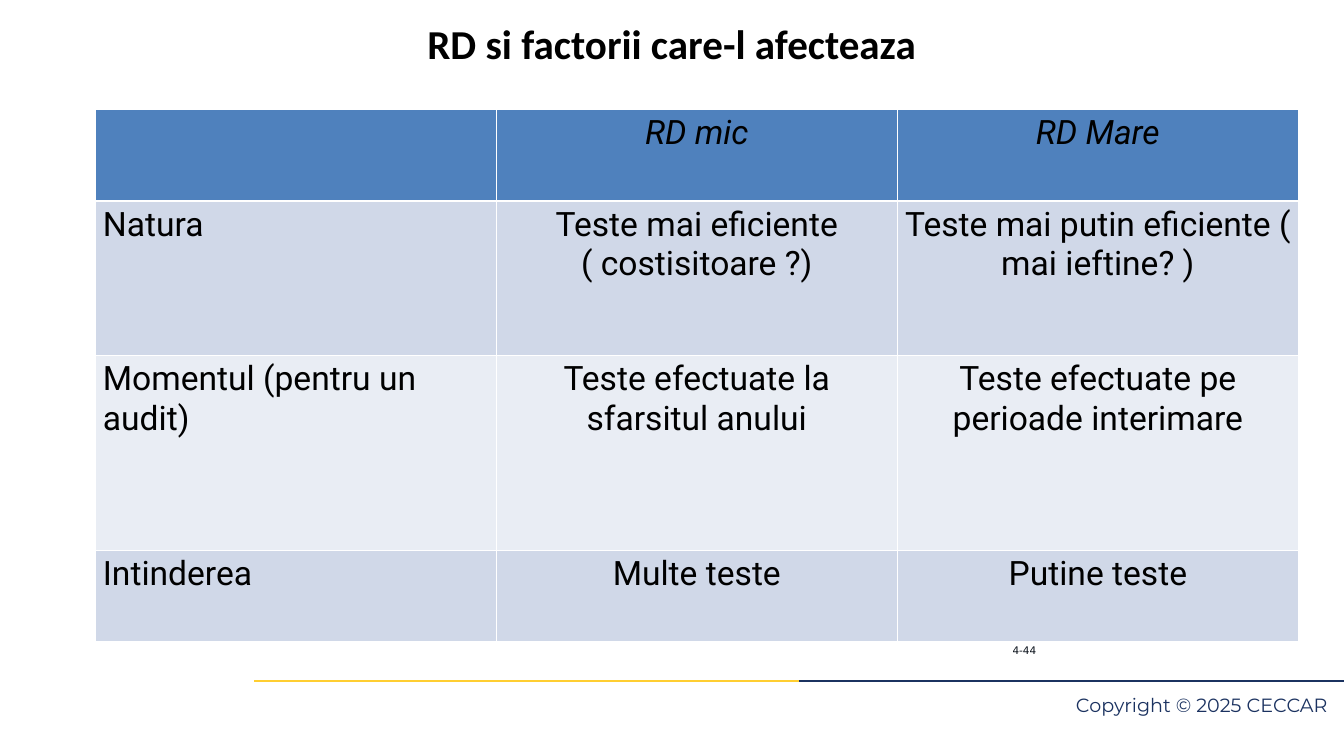
from dataclasses import dataclass

from lxml import etree
from pptx import Presentation
from pptx.dml.color import RGBColor
from pptx.enum import shapes, text
from pptx.oxml import ns
from pptx.util import Emu, Pt

EMU_PER_PX = 9525

BLACK = RGBColor(0x00, 0x00, 0x00)
WHITE = RGBColor(0xFF, 0xFF, 0xFF)
NAVY = RGBColor(0x1B, 0x32, 0x60)
YELLOW = RGBColor(0xFF, 0xCE, 0x31)
INK = RGBColor(0x09, 0x10, 0x19)
HEADER_BLUE = RGBColor(0x4F, 0x81, 0xBD)
BAND_DARK = RGBColor(0xD0, 0xD8, 0xE8)
BAND_LIGHT = RGBColor(0xE9, 0xED, 0xF4)

LEFT, CENTER, RIGHT = text.PP_ALIGN.LEFT, text.PP_ALIGN.CENTER, text.PP_ALIGN.RIGHT


@dataclass(frozen=True)
class Rule:
    start: int
    end: int
    color: RGBColor


@dataclass(frozen=True)
class Label:
    wording: str
    area: tuple[int, int, int, int]
    font: str
    size: float
    color: RGBColor
    align: text.PP_ALIGN = LEFT
    bold: bool = False
    inset: bool = True
    wrap: bool = True
    anchor: text.MSO_ANCHOR = text.MSO_ANCHOR.TOP
    spacing: float | None = None


@dataclass(frozen=True)
class Row:
    height: int
    fill: RGBColor
    cells: tuple[str, str, str]


RULE_Y = 973
RULES = [Rule(1140, 1920, NAVY), Rule(363, 1141, YELLOW)]

LABELS = [
    Label("Copyright © 2025 CECCAR ", (1368, 996, 536, 29), "Montserrat", 20.5, NAVY,
          RIGHT, inset=False, spacing=20.5),
    Label("RD si factorii care-l afecteaza", (44, 2, 1832, 120), "Calibri", 44, BLACK,
          CENTER, bold=True, anchor=text.MSO_ANCHOR.MIDDLE),
    Label("4-44", (1437, 916, 54, 46), "DejaVu Sans", 11.2, INK, wrap=False),
]

TABLE_X, TABLE_Y, COLUMN_WIDTH = 136, 156, 573
ROWS = [
    Row(131, HEADER_BLUE, ("", "RD mic", "RD Mare")),
    Row(221, BAND_DARK, ("Natura", "Teste mai eficiente ( costisitoare ?)",
                         "Teste mai putin eficiente ( mai ieftine? )")),
    Row(278, BAND_LIGHT, ("Momentul (pentru un audit)", "Teste efectuate la sfarsitul anului",
                          "Teste efectuate pe perioade interimare")),
    Row(131, BAND_DARK, ("Intinderea", "Multe teste", "Putine teste")),
]


def px(length: int) -> Emu:
    return Emu(length * EMU_PER_PX)


def add_rule(page, rule: Rule) -> None:
    line = page.shapes.add_connector(shapes.MSO_CONNECTOR.STRAIGHT, px(rule.start), px(RULE_Y),
                                     px(rule.end), px(RULE_Y))
    line.line.color.rgb = rule.color
    line.line.width = Pt(2.25)
    etree.SubElement(line._element.spPr, ns.qn("a:effectLst"))


def add_label(page, label: Label) -> None:
    frame = page.shapes.add_textbox(*map(px, label.area)).text_frame
    frame.word_wrap = label.wrap
    frame.vertical_anchor = label.anchor
    if not label.inset:
        frame.margin_left = frame.margin_top = frame.margin_right = frame.margin_bottom = 0
    para = frame.paragraphs[0]
    para.text = label.wording
    para.alignment = label.align
    if label.spacing:
        para.line_spacing = Pt(label.spacing)
    para.font.name = label.font
    para.font.size = Pt(label.size)
    para.font.bold = label.bold
    para.font.color.rgb = label.color


def add_borders(cell, is_header: bool) -> None:
    """Draw white cell borders, heavier under the header."""
    properties = cell._tc.get_or_add_tcPr()
    for index, side in enumerate(("lnL", "lnR", "lnT", "lnB")):
        width = Pt(3) if is_header and side == "lnB" else Pt(1)
        border = etree.Element(ns.qn(f"a:{side}"), w=str(int(width)))
        fill = etree.SubElement(border, ns.qn("a:solidFill"))
        etree.SubElement(fill, ns.qn("a:srgbClr"), val=str(WHITE))
        properties.insert(index, border)


def fill_cell(cell, wording: str, fill: RGBColor, align: text.PP_ALIGN, is_header: bool) -> None:
    cell.fill.solid()
    cell.fill.fore_color.rgb = fill
    cell.margin_left = cell.margin_right = px(11)
    cell.margin_top = cell.margin_bottom = px(6)
    add_borders(cell, is_header)
    para = cell.text_frame.paragraphs[0]
    para.text = wording
    para.alignment = align
    para.font.name = "Roboto"
    para.font.size = Pt(36)
    para.font.bold = False
    para.font.italic = is_header
    para.font.color.rgb = BLACK


def add_comparison(page) -> None:
    columns = len(ROWS[0].cells)
    table = page.shapes.add_table(len(ROWS), columns, px(TABLE_X), px(TABLE_Y),
                                  px(columns * COLUMN_WIDTH),
                                  px(sum(row.height for row in ROWS))).table
    for column in table.columns:
        column.width = px(COLUMN_WIDTH)
    for r, row in enumerate(ROWS):
        table.rows[r].height = px(row.height)
        for c, wording in enumerate(row.cells):
            fill_cell(table.cell(r, c), wording, row.fill, CENTER if c else LEFT, r == 0)


def main() -> None:
    deck = Presentation()
    deck.slide_width, deck.slide_height = px(1920), px(1080)
    page = deck.slides.add_slide(deck.slide_layouts[6])

    # Footer rules
    for rule in RULES:
        add_rule(page, rule)

    # Comparison table
    add_comparison(page)

    # Copyright, title and page number
    for label in LABELS:
        add_label(page, label)

    deck.save("out.pptx")


if __name__ == "__main__":
    main()
